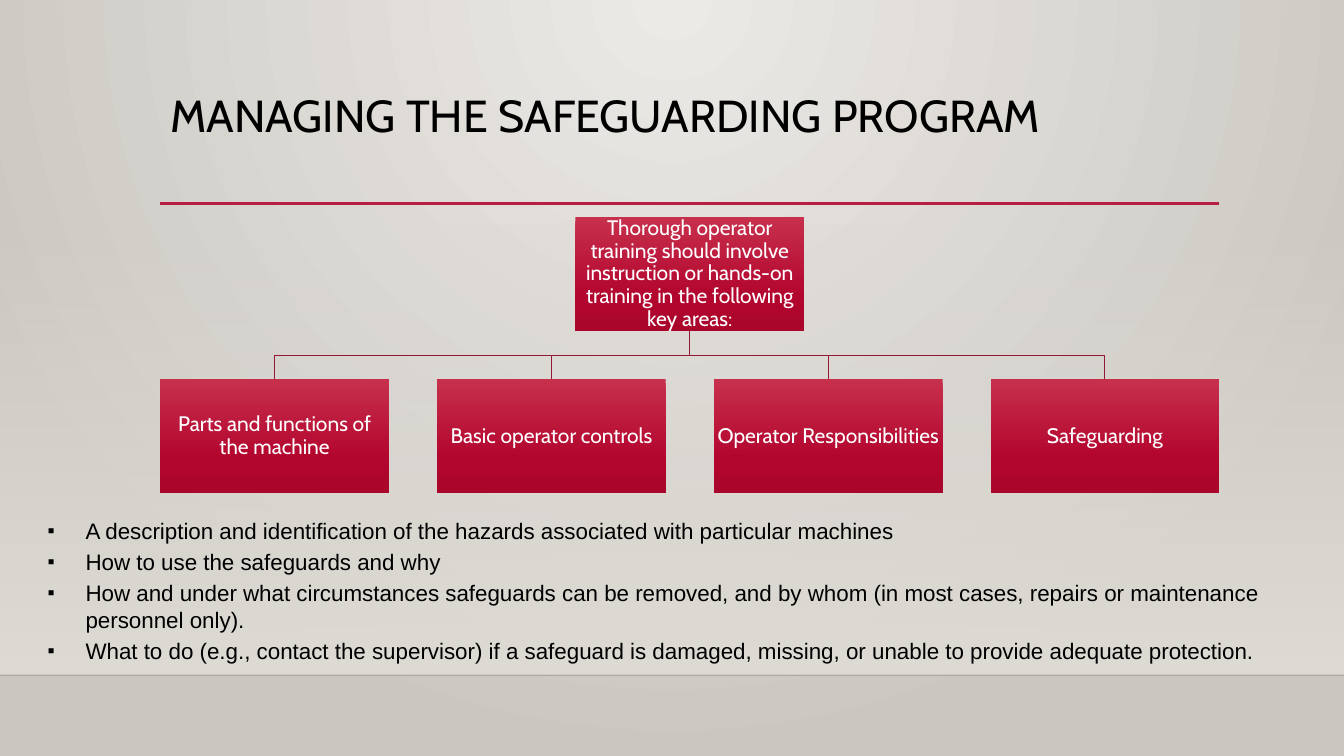
from dataclasses import dataclass

from pptx import Presentation
from pptx.dml.color import RGBColor
from pptx.enum.shapes import MSO_CONNECTOR as Connector, MSO_SHAPE as Shape
from pptx.enum.text import MSO_ANCHOR as Anchor, PP_ALIGN as Align
from pptx.oxml import parse_xml
from pptx.oxml.ns import nsdecls, qn
from pptx.util import Pt

TITLE = "MANAGING THE SAFEGUARDING PROGRAM"
TRAINING = ("Thorough operator training should involve instruction or hands-on "
            "training in the following key areas:")
KEY_AREAS = [
    "Parts and functions of the machine",
    "Basic operator controls",
    "Operator Responsibilities",
    "Safeguarding",
]
TOPICS = [
    "A description and identification of the hazards associated with particular machines",
    "How to use the safeguards and why",
    "How and under what circumstances safeguards can be removed, and by whom "
    "(in most cases, repairs or maintenance personnel only).",
    "What to do (e.g., contact the supervisor) if a safeguard is damaged, missing, "
    "or unable to provide adequate protection.",
]


@dataclass(frozen=True)
class Theme:
    heading_font: str = "Cabin"
    body_font: str = "Arial"
    title_size: float = 32
    box_size: float = 15
    body_size: float = 16
    text: str = "000000"
    box_text: str = "FFFFFF"
    accent: str = "B71E42"
    branch: str = "931835"
    floor_line: str = "000001"
    # Gradient stops: position, colour, opacity (all but colour in percent)
    backdrop: tuple = ((0, "ECEAE7", 100), (100, "CAC7C1", 100))
    wall: tuple = ((0, "DFDBD5", 0), (100, "DFDBD5", 100))
    box: tuple = ((0, "C7304C", 100), (69, "B3062F", 100), (100, "AA062C", 100))


THEME = Theme()
WIDTH, HEIGHT = 960, 540
FLOOR = 482.4
LEFT, RIGHT = 114.5, 871
RULE_Y = 145.2
BOX_W, BOX_H = 163.4, 81.7
ROOT_TOP, AREA_TOP = 155, 270.8
DOWNWARD = '<a:lin ang="5400000" scaled="0"/>'
FROM_TOP = '<a:path path="circle"><a:fillToRect l="43000" t="0" r="43000" b="100000"/></a:path>'


def set_gradient(fill, owner, stops, direction):
    """Fill with the given stops; owner is the element that holds the fill."""
    fill.gradient()
    old = next(owner.iter(qn("a:gradFill")))
    marks = "".join(
        f'<a:gs pos="{position * 1000}"><a:srgbClr val="{colour}">'
        f'<a:alpha val="{opacity * 1000}"/></a:srgbClr></a:gs>'
        for position, colour, opacity in stops)
    new = parse_xml(f'<a:gradFill {nsdecls("a")} rotWithShape="1">'
                    f'<a:gsLst>{marks}</a:gsLst>{direction}</a:gradFill>')
    old.getparent().replace(old, new)


def add_panel(page, left, top, width, height, stops):
    panel = page.shapes.add_shape(Shape.RECTANGLE, Pt(left), Pt(top), Pt(width), Pt(height))
    panel.shadow.inherit = False
    panel.line.fill.background()
    set_gradient(panel.fill, panel.element.spPr, stops, DOWNWARD)
    return panel


def add_rule(page, left, right, y, colour, weight, opacity=100):
    rule = page.shapes.add_connector(Connector.STRAIGHT, Pt(left), Pt(y), Pt(right), Pt(y))
    rule.line.color.rgb = RGBColor.from_string(colour)
    rule.line.width = Pt(weight)
    shade = next(rule.element.spPr.iter(qn("a:srgbClr")))
    shade.append(parse_xml(f'<a:alpha {nsdecls("a")} val="{opacity * 1000}"/>'))
    rule.element.spPr.append(parse_xml(f'<a:effectLst {nsdecls("a")}/>'))


def add_branch(page, start_x, start_y, end_x, end_y):
    middle = (start_y + end_y) / 2
    outline = page.shapes.build_freeform(Pt(start_x), Pt(start_y))
    outline.add_line_segments(
        [(Pt(x), Pt(y)) for x, y in ((start_x, middle), (end_x, middle), (end_x, end_y))],
        close=False)
    branch = outline.convert_to_shape()
    branch.shadow.inherit = False
    branch.fill.background()
    branch.line.color.rgb = RGBColor.from_string(THEME.branch)
    branch.line.width = Pt(0.75)


def add_bullet(para):
    props = para._p.get_or_add_pPr()
    props.set("marL", str(Pt(54)))
    props.set("indent", str(-Pt(27)))
    for xml in (f'<a:buClr {nsdecls("a")}><a:srgbClr val="{THEME.text}"/></a:buClr>',
                f'<a:buSzPct {nsdecls("a")} val="90000"/>',
                f'<a:buFont {nsdecls("a")} typeface="{THEME.body_font}"/>',
                f'<a:buChar {nsdecls("a")} char="▪"/>'):
        props.append(parse_xml(xml))


def write(shape, lines, *, font, size, colour, align=Align.LEFT, anchor=Anchor.TOP,
          inset=None, line_spacing=None, gap=0, bullets=False):
    frame = shape.text_frame
    frame.word_wrap = True
    frame.vertical_anchor = anchor
    if inset is not None:
        frame.margin_left = frame.margin_right = Pt(inset)
        frame.margin_top = frame.margin_bottom = Pt(inset)
    for index, line in enumerate(lines):
        para = frame.add_paragraph() if index else frame.paragraphs[0]
        para.alignment = align
        if line_spacing:
            para.line_spacing = line_spacing
        if index and gap:
            para.space_before = Pt(gap)
        if bullets:
            add_bullet(para)
        span = para.add_run()
        span.text = line
        span.font.name = font
        span.font.size = Pt(size)
        span.font.color.rgb = RGBColor.from_string(colour)


def add_text(page, left, top, width, height, lines, **style):
    box = page.shapes.add_textbox(Pt(left), Pt(top), Pt(width), Pt(height))
    write(box, lines, **style)


def add_chart_box(page, left, top, label):
    box = add_panel(page, left, top, BOX_W, BOX_H, THEME.box)
    write(box, [label], font=THEME.heading_font, size=THEME.box_size, colour=THEME.box_text,
          align=Align.CENTER, anchor=Anchor.MIDDLE, inset=0.75, line_spacing=0.9)


def add_training_chart(page):
    pitch = (RIGHT - LEFT - BOX_W) / (len(KEY_AREAS) - 1)
    lefts = [LEFT + index * pitch for index in range(len(KEY_AREAS))]
    centre = (LEFT + RIGHT) / 2
    for left in reversed(lefts):
        add_branch(page, centre, ROOT_TOP + BOX_H, left + BOX_W / 2, AREA_TOP)
    add_chart_box(page, centre - BOX_W / 2, ROOT_TOP, TRAINING)
    for left, label in zip(lefts, KEY_AREAS):
        add_chart_box(page, left, AREA_TOP, label)


def main():
    deck = Presentation()
    deck.slide_width, deck.slide_height = Pt(WIDTH), Pt(HEIGHT)
    page = deck.slides.add_slide(deck.slide_layouts[6])
    set_gradient(page.background.fill, page.element, THEME.backdrop, FROM_TOP)

    wall_top = 159
    add_panel(page, 0, wall_top, WIDTH, FLOOR - wall_top, THEME.wall)
    add_rule(page, 0, WIDTH, FLOOR, THEME.floor_line, 1, opacity=20)
    add_rule(page, LEFT, RIGHT, RULE_Y, THEME.accent, 2.5)
    add_text(page, LEFT, 63.3, 756, 82.6, [TITLE], font=THEME.heading_font,
             size=THEME.title_size, colour=THEME.text, line_spacing=0.9)
    add_training_chart(page)
    add_text(page, 0, 365.8, WIDTH, 113, TOPICS, font=THEME.body_font,
             size=THEME.body_size, colour=THEME.text, gap=3, bullets=True)
    deck.save("out.pptx")


if __name__ == "__main__":
    main()
